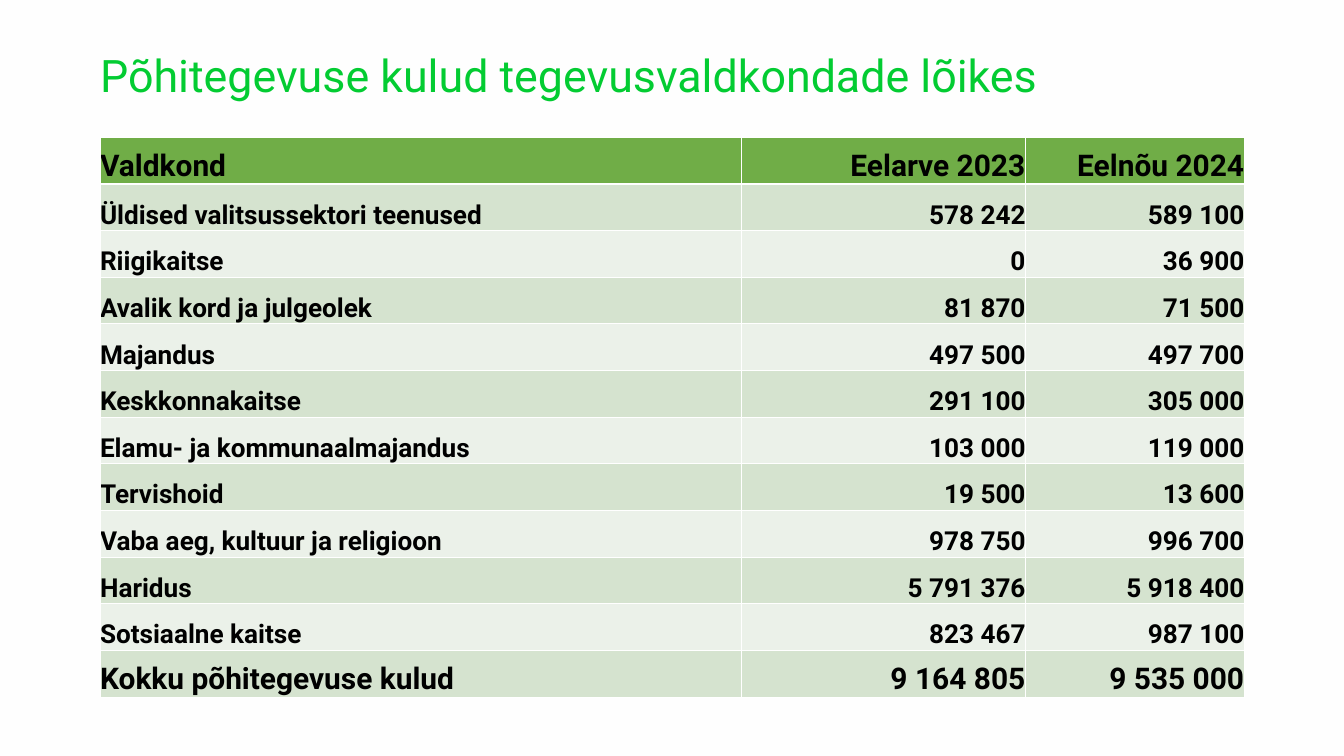
from lxml.etree import SubElement
from pptx import Presentation
from pptx.dml.color import RGBColor
from pptx.enum.text import MSO_ANCHOR, MSO_AUTO_SIZE, PP_ALIGN
from pptx.oxml.ns import qn
from pptx.util import Pt

COLORS = {
    "background": "FEFEFE",
    "title": "03CC32",
    "text": "000000",
    "header": "70AD47",
    "band_dark": "D5E3CF",
    "band_light": "EBF1E9",
    "border": "FFFFFF",
}
FONT = "Roboto"
COLUMN_WIDTHS = (686.9, 304.6, 234.5)
ROWS = [
    ("Valdkond", "Eelarve 2023", "Eelnõu 2024"),
    ("Üldised valitsussektori teenused", "578 242", "589 100"),
    ("Riigikaitse", "0", "36 900"),
    ("Avalik kord ja julgeolek", "81 870", "71 500"),
    ("Majandus", "497 500", "497 700"),
    ("Keskkonnakaitse", "291 100", "305 000"),
    ("Elamu- ja kommunaalmajandus", "103 000", "119 000"),
    ("Tervishoid", "19 500", "13 600"),
    ("Vaba aeg, kultuur ja religioon", "978 750", "996 700"),
    ("Haridus", "5 791 376", "5 918 400"),
    ("Sotsiaalne kaitse", "823 467", "987 100"),
    ("Kokku põhitegevuse kulud", "9 164 805", "9 535 000"),
]


def color(name):
    return RGBColor.from_string(COLORS[name])


def write_text(text_frame, text, size, color_name="text", bold=False,
               align=PP_ALIGN.LEFT, line_spacing=None):
    paragraph = text_frame.paragraphs[0]
    paragraph.alignment = align
    if line_spacing:
        paragraph.line_spacing = Pt(line_spacing)
    run = paragraph.add_run()
    run.text = text
    run.font.name = FONT
    run.font.size = Pt(size)
    run.font.bold = bold
    run.font.color.rgb = color(color_name)


def set_borders(cell, widths):
    """Set left, right, top and bottom borders, which must precede the fill."""
    properties = cell._tc.get_or_add_tcPr()
    for index, (side, width) in enumerate(zip("LRTB", widths)):
        line = SubElement(properties, qn(f"a:ln{side}"), w=str(Pt(width)))
        fill = SubElement(line, qn("a:solidFill"))
        SubElement(fill, qn("a:srgbClr"), val=COLORS["border"])
        properties.insert(index, line)


def add_title(slide, left, top, width, height):
    title = slide.shapes.title
    title.left, title.top = Pt(left), Pt(top)
    title.width, title.height = Pt(width), Pt(height)
    frame = title.text_frame
    frame.margin_left = frame.margin_right = 0
    frame.margin_top = frame.margin_bottom = 0
    frame.vertical_anchor = MSO_ANCHOR.TOP
    frame.word_wrap = True
    frame.auto_size = MSO_AUTO_SIZE.SHAPE_TO_FIT_TEXT
    write_text(frame, "Põhitegevuse kulud tegevusvaldkondade lõikes", 48,
               color_name="title", line_spacing=64.4)


def add_cost_table(slide, left, top, width, height):
    table = slide.shapes.add_table(len(ROWS), len(COLUMN_WIDTHS), Pt(left),
                                   Pt(top), Pt(width), Pt(height)).table
    for column, share in zip(table.columns, COLUMN_WIDTHS):
        column.width = Pt(width * share / sum(COLUMN_WIDTHS))
    last = len(ROWS) - 1
    for row_index, values in enumerate(ROWS):
        # Header and total are larger; body rows alternate in colour
        size = 32 if row_index in (0, last) else 28
        band = "band_dark" if row_index % 2 else "band_light"
        fill_name = band if row_index else "header"
        top_border = 3 if row_index == 1 else 1
        bottom_border = 3 if row_index == 0 else 1
        for column_index, value in enumerate(values):
            cell = table.cell(row_index, column_index)
            cell.margin_left = cell.margin_right = 0
            cell.margin_top = cell.margin_bottom = 0
            cell.vertical_anchor = MSO_ANCHOR.BOTTOM
            cell.fill.solid()
            cell.fill.fore_color.rgb = color(fill_name)
            set_borders(cell, (1, 1, top_border, bottom_border))
            write_text(cell.text_frame, value, size, bold=True,
                       align=PP_ALIGN.RIGHT if column_index else PP_ALIGN.LEFT)


def main():
    presentation = Presentation()
    presentation.slide_width, presentation.slide_height = Pt(1440), Pt(810)
    slide = presentation.slides.add_slide(presentation.slide_layouts[5])
    slide.background.fill.solid()
    slide.background.fill.fore_color.rgb = color("background")

    # Title above the table, sharing its left edge and width
    add_title(slide, 107.2, 44.6, 1226, 59.8)
    add_cost_table(slide, 107.2, 147, 1226, 600)
    presentation.save("out.pptx")


if __name__ == "__main__":
    main()
